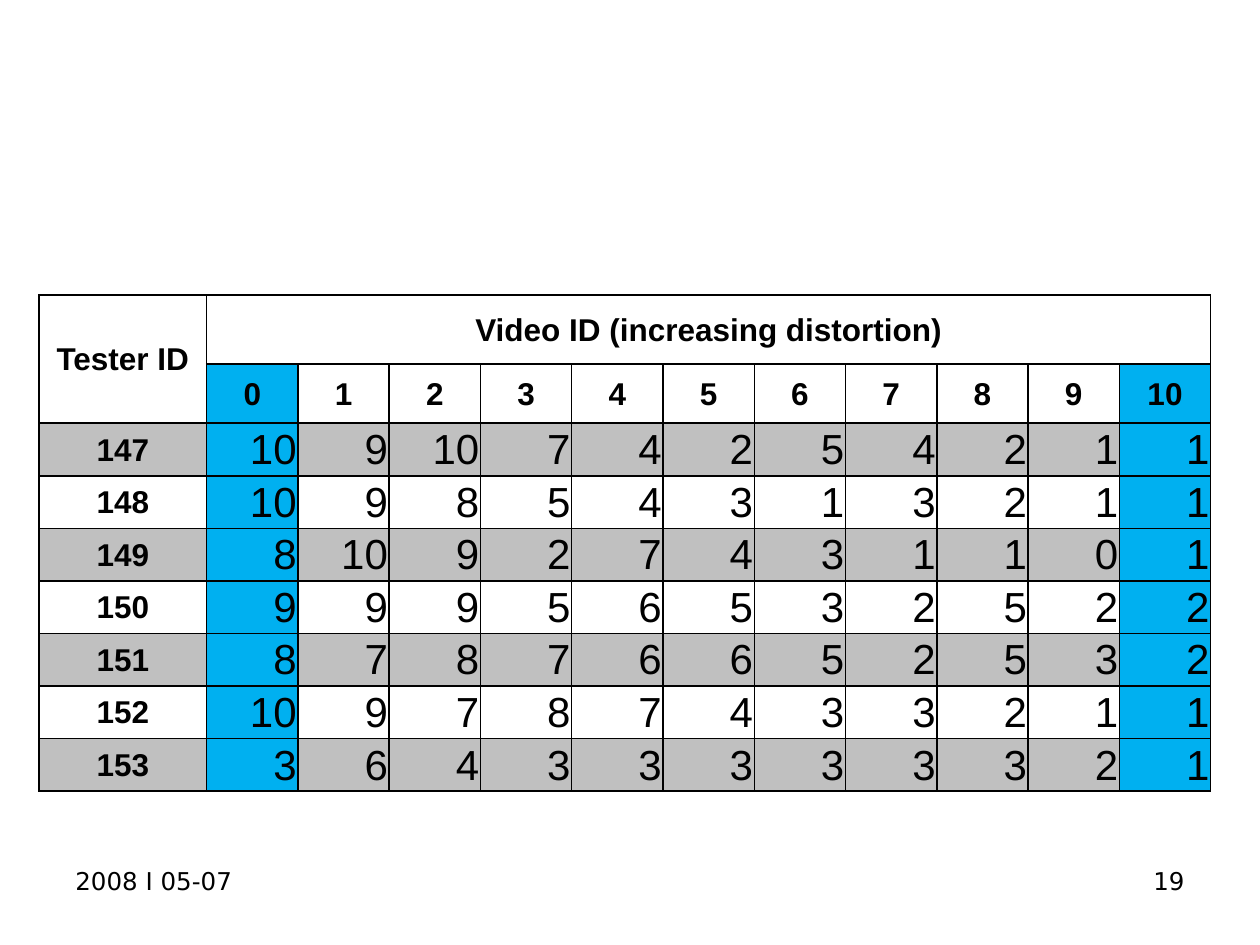
from lxml import etree
from pptx import Presentation
from pptx import util as u
from pptx.dml import color
from pptx.enum import text
from pptx.oxml import ns

WIDTH, HEIGHT = 10, 7.5
BLACK, GREY, BLUE = "000000", "C0C0C0", "00B0F0"
CENTER, RIGHT, LEFT = text.PP_ALIGN.CENTER, text.PP_ALIGN.RIGHT, text.PP_ALIGN.LEFT
TABLE_LEFT, TABLE_TOP, TABLE_WIDTH, TABLE_HEIGHT = 0.31, 2.34, 9.3, 3.94
TESTER_WIDTH = 1.33
HEADER_HEIGHTS = [0.55, 0.47]

SCORES = {
    147: [10, 9, 10, 7, 4, 2, 5, 4, 2, 1, 1],
    148: [10, 9, 8, 5, 4, 3, 1, 3, 2, 1, 1],
    149: [8, 10, 9, 2, 7, 4, 3, 1, 1, 0, 1],
    150: [9, 9, 9, 5, 6, 5, 3, 2, 5, 2, 2],
    151: [8, 7, 8, 7, 6, 6, 5, 2, 5, 3, 2],
    152: [10, 9, 7, 8, 7, 4, 3, 3, 2, 1, 1],
    153: [3, 6, 4, 3, 3, 3, 3, 3, 3, 2, 1],
}
VIDEOS = 11


def rgb(value):
    return color.RGBColor.from_string(value)


def write(frame, words, size=18, font="Arial", bold=False, align=CENTER):
    paragraph = frame.paragraphs[0]
    paragraph.alignment = align
    run = paragraph.add_run()
    run.text = str(words)
    run.font.size = u.Pt(size)
    run.font.name = font
    run.font.bold = bold
    run.font.color.rgb = rgb(BLACK)


def add_footer(slide, words, left, align):
    box = slide.shapes.add_textbox(
        u.Inches(left), u.Inches(0.91 * HEIGHT), u.Inches(2.33), u.Inches(0.52))
    box.text_frame.word_wrap = True
    write(box.text_frame, words, size=14, font="DejaVu Sans", align=align)


def add_borders(cell, top, bottom):
    properties = cell._tc.get_or_add_tcPr()
    for side, points in (("L", 1), ("R", 1), ("T", top), ("B", bottom)):
        line = etree.SubElement(properties, ns.qn(f"a:ln{side}"), w=str(u.Pt(points)))
        solid = etree.SubElement(line, ns.qn("a:solidFill"))
        etree.SubElement(solid, ns.qn("a:srgbClr"), val=BLACK)


def style_cell(cell, row, column):
    cell.vertical_anchor = text.MSO_ANCHOR.MIDDLE
    cell.margin_left = cell.margin_right = cell.margin_top = u.Inches(0.01)
    cell.margin_bottom = 0
    add_borders(cell, top=1.5 if row in (1, 2) else 1, bottom=1.5 if row < 2 else 1)
    if row > 0 and column in (1, VIDEOS):
        fill = BLUE
    elif row >= 2 and row % 2 == 0:
        fill = GREY
    else:
        cell.fill.background()
        return
    cell.fill.solid()
    cell.fill.fore_color.rgb = rgb(fill)


def add_score_table(slide):
    headers = len(HEADER_HEIGHTS)
    score_height = (TABLE_HEIGHT - sum(HEADER_HEIGHTS)) / len(SCORES)
    video_width = (TABLE_WIDTH - TESTER_WIDTH) / VIDEOS
    table = slide.shapes.add_table(
        headers + len(SCORES), VIDEOS + 1, u.Inches(TABLE_LEFT), u.Inches(TABLE_TOP),
        u.Inches(TABLE_WIDTH), u.Inches(TABLE_HEIGHT)).table
    table.first_row = table.horz_banding = False

    for column, width in zip(table.columns, [TESTER_WIDTH] + [video_width] * VIDEOS):
        column.width = u.Inches(width)
    for row, height in zip(table.rows, HEADER_HEIGHTS + [score_height] * len(SCORES)):
        row.height = u.Inches(height)
    for r, row in enumerate(table.rows):
        for c, cell in enumerate(row.cells):
            style_cell(cell, r, c)

    table.cell(0, 0).merge(table.cell(1, 0))
    table.cell(0, 1).merge(table.cell(0, VIDEOS))
    write(table.cell(0, 0).text_frame, "Tester ID", bold=True)
    write(table.cell(0, 1).text_frame, "Video ID (increasing distortion)", bold=True)
    for video in range(VIDEOS):
        write(table.cell(1, video + 1).text_frame, video, bold=True)
    for r, (tester, scores) in enumerate(SCORES.items(), headers):
        write(table.cell(r, 0).text_frame, tester, bold=True)
        for c, score in enumerate(scores, 1):
            write(table.cell(r, c).text_frame, score, size=24, align=RIGHT)


def main():
    deck = Presentation()
    deck.slide_width, deck.slide_height = u.Inches(WIDTH), u.Inches(HEIGHT)
    slide = deck.slides.add_slide(deck.slide_layouts[6])
    add_footer(slide, "2008 I 05-07", 0.05 * WIDTH, LEFT)
    add_footer(slide, "19", 0.95 * WIDTH - 2.33, RIGHT)
    add_score_table(slide)
    deck.save("out.pptx")


if __name__ == "__main__":
    main()
